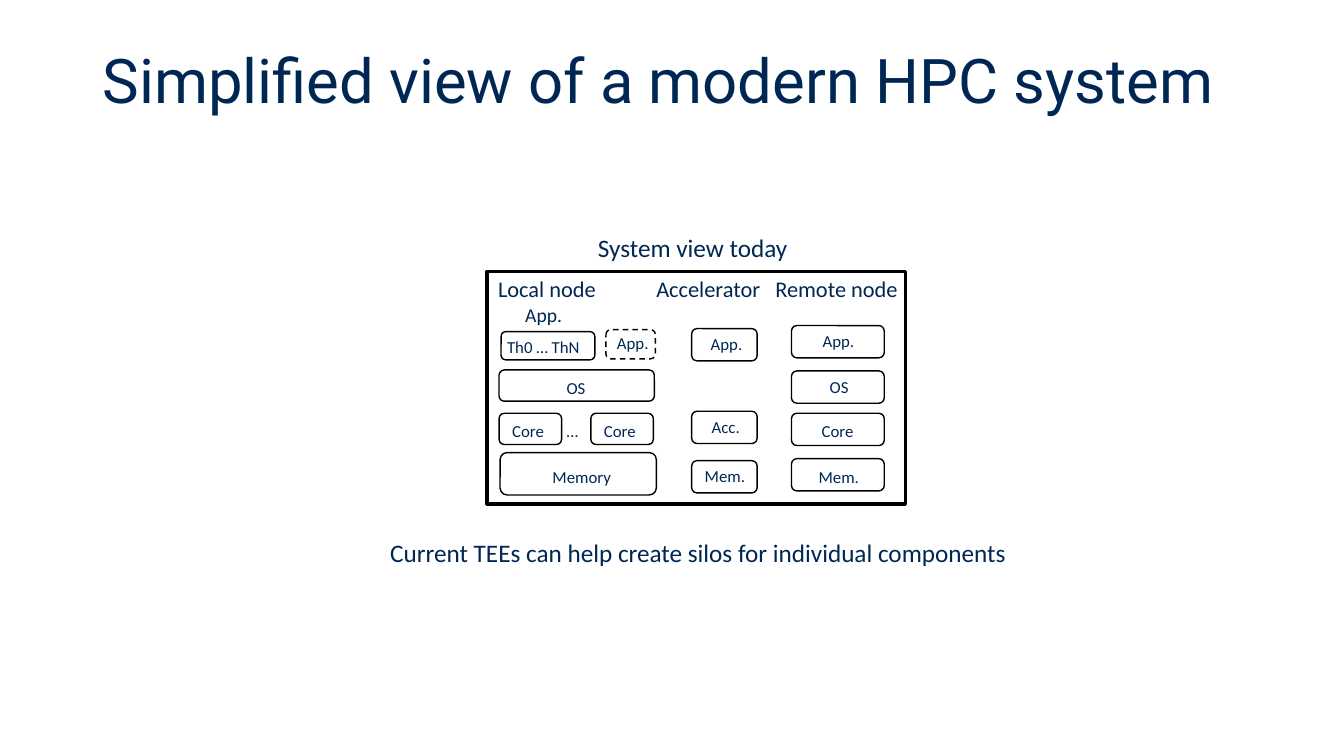
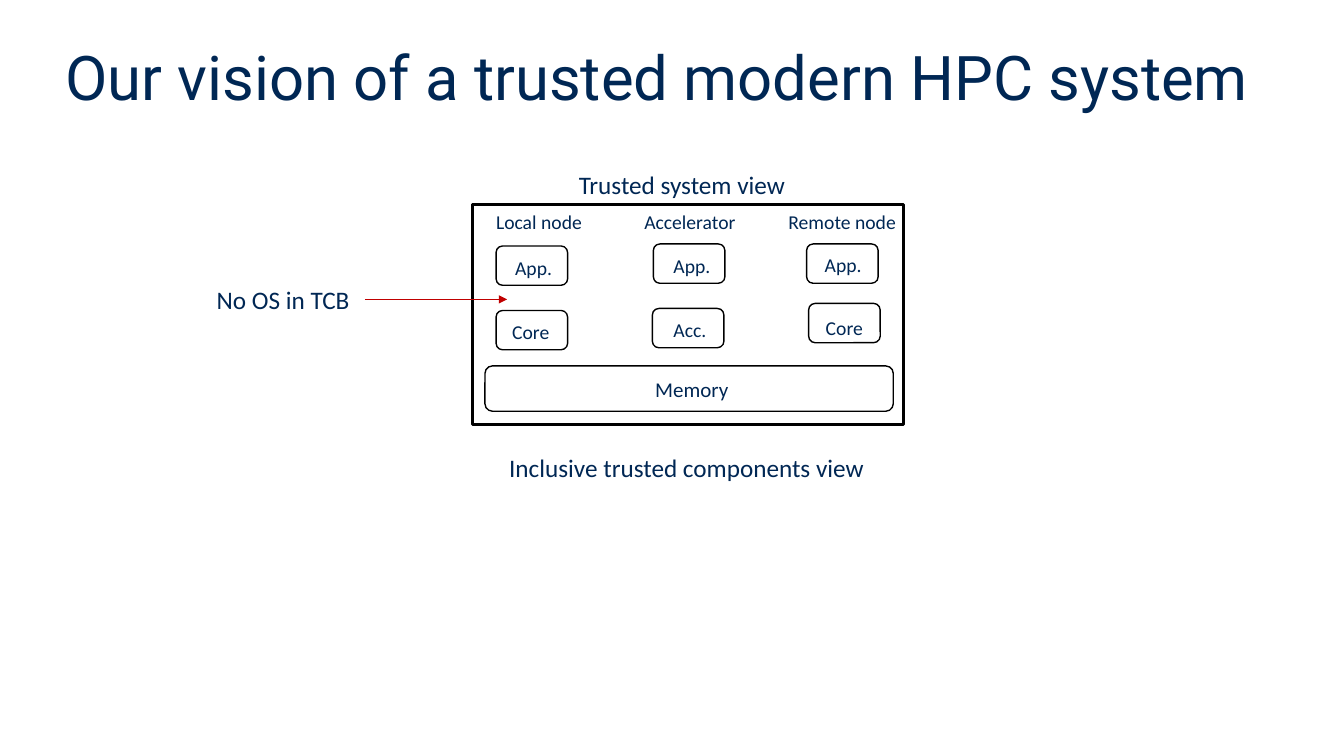
"""Build two slides comparing today's HPC system with a trusted one."""
from dataclasses import dataclass

import pptx
import pptx.dml.color
import pptx.enum.dml
import pptx.enum.shapes
import pptx.enum.text
import pptx.oxml.ns
import pptx.presentation
import pptx.shapes.autoshape
import pptx.slide
import pptx.text.text
import pptx.util
from lxml import etree

Inches = pptx.util.Inches
Pt = pptx.util.Pt
COLOURS = {"text": "002754", "outline": "000000", "arrow": "C00000"}
TITLE_FONT = "Roboto"
BODY_FONT = "Calibri"
CORNER_INSET = 0.05


@dataclass(frozen=True)
class Label:
    text: str
    left: float
    top: float
    width: float
    size: float


@dataclass(frozen=True)
class Component:
    text: str
    left: float
    top: float
    width: float
    height: float
    text_left: float
    text_top: float
    size: float = 12
    dashed: bool = False


@dataclass(frozen=True)
class Frame:
    left: float
    top: float
    width: float
    height: float


@dataclass(frozen=True)
class Arrow:
    start: float
    end: float
    y: float


@dataclass(frozen=True)
class View:
    title: Label
    frame: Frame
    labels: list[Label]
    components: list[Component]
    arrows: list[Arrow]


def rgb(name: str) -> pptx.dml.color.RGBColor:
    return pptx.dml.color.RGBColor.from_string(COLOURS[name])


def write(frame: pptx.text.text.TextFrame, text: str, size: float,
          font: str = BODY_FONT, inset: tuple[float, float] = (0, 0)) -> None:
    frame.word_wrap = True
    frame.vertical_anchor = pptx.enum.text.MSO_ANCHOR.TOP
    frame.margin_left, frame.margin_top = (Inches(side) for side in inset)
    frame.margin_right = frame.margin_bottom = 0
    paragraph = frame.paragraphs[0]
    paragraph.text = text
    paragraph.alignment = pptx.enum.text.PP_ALIGN.LEFT
    paragraph.font.name = font
    paragraph.font.size = Pt(size)
    paragraph.font.color.rgb = rgb("text")


def add_label(slide: pptx.slide.Slide, label: Label) -> None:
    box = slide.shapes.add_textbox(
        Inches(label.left), Inches(label.top),
        Inches(label.width), Inches(label.size / 60))
    write(box.text_frame, label.text, label.size)


def add_title(slide: pptx.slide.Slide, title: Label) -> None:
    box = slide.shapes.add_textbox(
        Inches(title.left), Inches(title.top), Inches(title.width), Inches(0.86))
    write(box.text_frame, title.text, title.size, TITLE_FONT, (0.1, 0.05))
    box.text_frame.margin_bottom = Inches(0.05)
    box.text_frame.vertical_anchor = pptx.enum.text.MSO_ANCHOR.MIDDLE
    box.text_frame.paragraphs[0].line_spacing = 0.9


def add_outline(slide: pptx.slide.Slide, area: Frame | Component,
                preset: pptx.enum.shapes.MSO_SHAPE,
                weight: float) -> pptx.shapes.autoshape.Shape:
    shape = slide.shapes.add_shape(
        preset, Inches(area.left), Inches(area.top),
        Inches(area.width), Inches(area.height))
    shape.shadow.inherit = False
    shape.fill.background()
    shape.line.color.rgb = rgb("outline")
    shape.line.width = Pt(weight)
    return shape


def add_component(slide: pptx.slide.Slide, part: Component) -> None:
    shape = add_outline(
        slide, part, pptx.enum.shapes.MSO_SHAPE.ROUNDED_RECTANGLE, 1)
    if part.dashed:
        shape.line.dash_style = pptx.enum.dml.MSO_LINE.DASH
    corner = CORNER_INSET * part.height
    inset = (max(0, part.text_left - part.left - corner),
             max(0, part.text_top - part.top - corner))
    write(shape.text_frame, part.text, part.size, inset=inset)


def add_arrow(slide: pptx.slide.Slide, arrow: Arrow) -> None:
    connector = slide.shapes.add_connector(
        pptx.enum.shapes.MSO_CONNECTOR.STRAIGHT, Inches(arrow.start),
        Inches(arrow.y), Inches(arrow.end), Inches(arrow.y))
    connector.line.color.rgb = rgb("arrow")
    connector.line.width = Pt(0.5)
    qn = pptx.oxml.ns.qn
    properties = connector._element.spPr
    etree.SubElement(properties.find(qn("a:ln")), qn("a:tailEnd"), type="triangle")
    etree.SubElement(properties, qn("a:effectLst"))


def add_view(deck: pptx.presentation.Presentation, view: View) -> None:
    slide = deck.slides.add_slide(deck.slide_layouts[6])
    add_title(slide, view.title)
    add_outline(slide, view.frame, pptx.enum.shapes.MSO_SHAPE.RECTANGLE, 2.25)
    for part in view.components:
        add_component(slide, part)
    for label in view.labels:
        add_label(slide, label)
    for arrow in view.arrows:
        add_arrow(slide, arrow)


def headings(lefts: tuple[float, ...], top: float, size: float) -> list[Label]:
    names = ("Local node", "Accelerator", "Remote node")
    return [Label(name, left, top, 1.4, size) for name, left in zip(names, lefts)]


def today_view() -> View:
    local = [
        Component("Th0 … ThN", 4.97, 3.29, 0.93, 0.28, 5.03, 3.34),
        Component("App.", 6.01, 3.27, 0.49, 0.29, 6.12, 3.3, dashed=True),
        Component("OS", 4.95, 3.67, 1.54, 0.31, 5.62, 3.75),
        Component("Core", 4.95, 4.1, 0.62, 0.31, 5.08, 4.17),
        Component("Core", 5.86, 4.1, 0.62, 0.31, 5.99, 4.17),
        Component("Memory", 4.96, 4.49, 1.55, 0.42, 5.48, 4.63),
    ]
    accelerator = [
        Component(text, 6.86, top, 0.65, 0.32, text_left, top + 0.05)
        for text, top, text_left in (
            ("App.", 3.26, 7.05), ("Acc.", 4.08, 7.06), ("Mem.", 4.57, 6.99))
    ]
    remote = [
        Component(text, 7.85, top, 0.92, 0.32, text_left, text_top)
        for text, top, text_left, text_top in (
            ("App.", 3.23, 8.16, 3.28), ("OS", 3.68, 8.23, 3.74),
            ("Core", 4.1, 8.15, 4.17), ("Mem.", 4.55, 8.12, 4.63))
    ]
    labels = [
        Label("System view today", 5.93, 2.3, 2.5, 18),
        Label("App.", 5.21, 3.01, 0.6, 14),
        Label("…", 5.62, 4.17, 0.2, 12),
        Label("Current TEEs can help create silos for individual components",
              3.87, 5.33, 6.44, 18),
    ]
    return View(
        Label("Simplified view of a modern HPC system", 0.92, 0.4, 11.5, 44),
        Frame(4.83, 2.69, 4.15, 2.31),
        labels + headings((4.94, 6.51, 7.69), 2.73, 16),
        local + accelerator + remote, [])


def trusted_view() -> View:
    nodes = [
        Component(text, left, top, 0.71, 0.39, text_left, text_top, 14)
        for text, left, top, text_left, text_top in (
            ("App.", 4.92, 2.44, 5.11, 2.54), ("Core", 4.92, 3.08, 5.08, 3.17),
            ("App.", 6.48, 2.42, 6.68, 2.52), ("Acc.", 6.47, 3.06, 6.68, 3.15),
            ("App.", 8, 2.42, 8.18, 2.51), ("Core", 8.02, 3.01, 8.19, 3.13))
    ]
    memory = Component("Memory", 4.81, 3.63, 4.05, 0.45, 6.5, 3.74, 15)
    labels = [
        Label("Trusted system view", 5.74, 1.68, 2.52, 18),
        Label("No OS in TCB", 2.15, 2.82, 1.67, 18),
        Label("Inclusive trusted components view", 5.05, 4.49, 3.78, 18),
    ]
    return View(
        Label("Our vision of a trusted modern HPC system", 0.55, 0.37, 12.42, 44),
        Frame(4.69, 2.03, 4.27, 2.18),
        labels + headings((4.92, 6.39, 7.82), 2.08, 14),
        nodes + [memory], [Arrow(3.62, 5.03, 2.97)])


def main() -> None:
    deck = pptx.Presentation()
    deck.slide_width = Inches(13.33)
    deck.slide_height = Inches(7.5)
    for view in (today_view(), trusted_view()):
        add_view(deck, view)
    deck.save("out.pptx")


if __name__ == "__main__":
    main()
